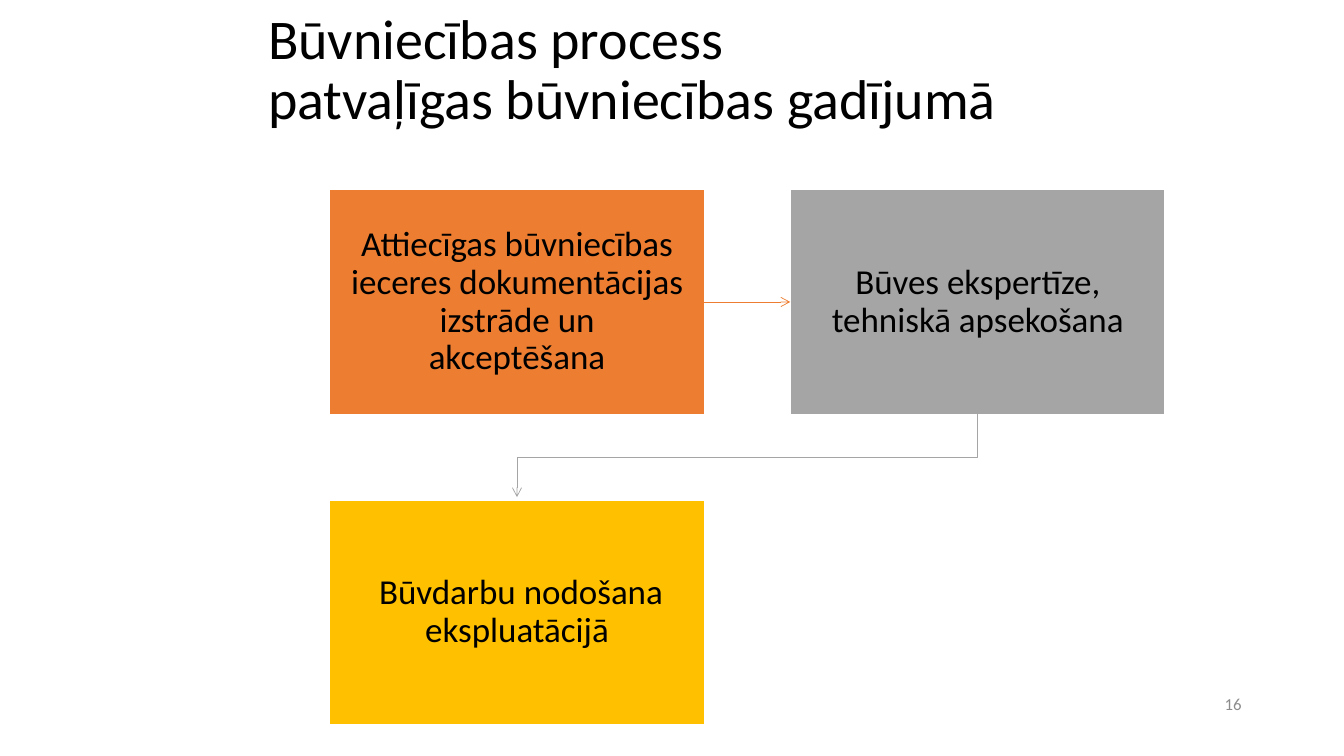
from dataclasses import dataclass

from lxml.etree import SubElement
from pptx import Presentation
from pptx.dml.color import RGBColor
from pptx.enum.shapes import MSO_CONNECTOR, MSO_SHAPE
from pptx.enum.text import MSO_ANCHOR, MSO_AUTO_SIZE, PP_ALIGN
from pptx.oxml.ns import qn
from pptx.shapes.autoshape import Shape
from pptx.slide import Slide
from pptx.text.text import TextFrame
from pptx.util import Pt

ORANGE, GREY, YELLOW = "ED7D31", "A5A5A5", "FFC000"
BLACK, WHITE, NUMBER_GREY = "000000", "FFFFFF", "8C8C8C"

# Step grid, in points
GRID_LEFT, GRID_TOP = 235.4, 135.4
STEP_WIDTH, STEP_HEIGHT = 267.8, 160.6
COLUMN_PITCH, ROW_PITCH = 329.1, 221.7
ARROW_GAP = 2


@dataclass(frozen=True)
class Step:
    text: str
    fill: str
    column: int
    row: int

    @property
    def left(self) -> float:
        return GRID_LEFT + self.column * COLUMN_PITCH

    @property
    def top(self) -> float:
        return GRID_TOP + self.row * ROW_PITCH

    @property
    def middle(self) -> float:
        return self.left + STEP_WIDTH / 2

    @property
    def bottom(self) -> float:
        return self.top + STEP_HEIGHT


DOCUMENTS = Step("Attiecīgas būvniecības ieceres dokumentācijas izstrāde un akceptēšana", ORANGE, 0, 0)
INSPECTION = Step("Būves ekspertīze, tehniskā apsekošana", GREY, 1, 0)
HANDOVER = Step(" Būvdarbu nodošana ekspluatācijā", YELLOW, 0, 1)


def color(value: str) -> RGBColor:
    return RGBColor.from_string(value)


def write(frame: TextFrame, text: str, size: float, ink: str,
          align: PP_ALIGN, spacing: float, inset: float | None = None) -> None:
    frame_format = {"word_wrap": True, "auto_size": MSO_AUTO_SIZE.NONE,
                    "vertical_anchor": MSO_ANCHOR.MIDDLE}
    if inset is not None:
        for side in ("left", "top", "right", "bottom"):
            frame_format[f"margin_{side}"] = Pt(inset)
    for name, value in frame_format.items():
        setattr(frame, name, value)
    frame.text = text
    para = frame.paragraphs[0]
    para.alignment = align
    para.line_spacing = spacing
    for span in para.runs:
        for name, value in {"name": "Calibri", "size": Pt(size)}.items():
            setattr(span.font, name, value)
        span.font.color.rgb = color(ink)


def add_step(page: Slide, step: Step) -> Shape:
    box = page.shapes.add_shape(MSO_SHAPE.RECTANGLE, Pt(step.left), Pt(step.top),
                                Pt(STEP_WIDTH), Pt(STEP_HEIGHT))
    box.shadow.inherit = False
    box.fill.solid()
    box.fill.fore_color.rgb = color(step.fill)
    box.line.color.rgb = color(WHITE)
    box.line.width = Pt(1)
    write(box.text_frame, step.text, 25, BLACK, PP_ALIGN.CENTER, 0.9, inset=13.7)
    return box


def style_arrow(arrow, ink: str) -> None:
    arrow.line.color.rgb = color(ink)
    arrow.line.width = Pt(0.5)
    properties = arrow.element.spPr
    SubElement(properties.find(qn("a:ln")), qn("a:tailEnd"), type="arrow")
    SubElement(properties, qn("a:effectLst"))


def add_straight_arrow(page: Slide, start: Shape, end: Shape, ink: str) -> None:
    arrow = page.shapes.add_connector(MSO_CONNECTOR.STRAIGHT, 0, 0, 0, 0)
    arrow.begin_connect(start, 3)
    arrow.end_connect(end, 1)
    style_arrow(arrow, ink)


def add_bent_arrow(page: Slide, start: Step, end: Step, ink: str) -> None:
    bend = (start.bottom + end.top) / 2
    points = [(start.middle, bend), (end.middle, bend), (end.middle, end.top - ARROW_GAP)]
    builder = page.shapes.build_freeform(Pt(start.middle), Pt(start.bottom))
    builder.add_line_segments([(Pt(x), Pt(y)) for x, y in points], close=False)
    arrow = builder.convert_to_shape()
    arrow.fill.background()
    style_arrow(arrow, ink)


def main() -> None:
    deck = Presentation()
    deck.slide_width, deck.slide_height = Pt(960), Pt(540)
    page = deck.slides.add_slide(deck.slide_layouts[5])

    # Title
    title = page.shapes.title
    place = {"left": 184.3, "top": -1.4, "width": 729.4, "height": 104.4}
    for name, value in place.items():
        setattr(title, name, Pt(value))
    write(title.text_frame, "Būvniecības process\vpatvaļīgas būvniecības gadījumā",
          40, BLACK, PP_ALIGN.LEFT, 0.9)

    # Process steps and arrows
    boxes = {step: add_step(page, step) for step in (DOCUMENTS, INSPECTION, HANDOVER)}
    add_straight_arrow(page, boxes[DOCUMENTS], boxes[INSPECTION], ORANGE)
    add_bent_arrow(page, INSPECTION, HANDOVER, GREY)

    # Slide number
    number = page.shapes.add_textbox(Pt(678), Pt(488), Pt(216), Pt(28.8))
    write(number.text_frame, "16", 12, NUMBER_GREY, PP_ALIGN.RIGHT, 1.0)

    deck.save("out.pptx")


if __name__ == "__main__":
    main()
